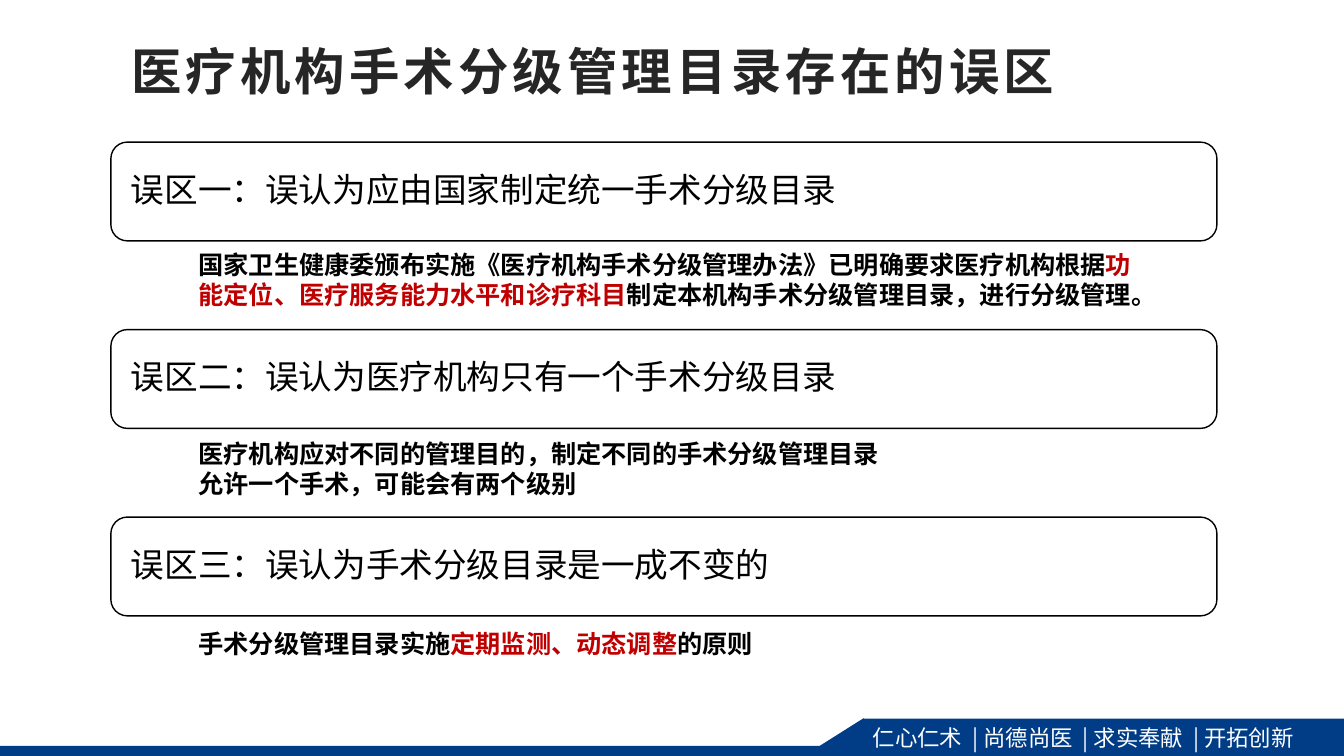
from pptx import Presentation
from pptx.dml.color import RGBColor
from pptx.enum.shapes import MSO_SHAPE
from pptx.enum.text import MSO_ANCHOR, MSO_AUTO_SIZE, PP_ALIGN
from pptx.oxml.ns import qn
from pptx.util import Inches, Pt
from lxml import etree

RECT = MSO_SHAPE.RECTANGLE
ROUND = MSO_SHAPE.ROUNDED_RECTANGLE
WEDGE = MSO_SHAPE.RIGHT_TRIANGLE
MIDDLE, TOP = MSO_ANCHOR.MIDDLE, MSO_ANCHOR.TOP
LATIN, ASIAN = "Arial", "Noto Sans CJK JP"
BLACK, WHITE, RED, NAVY, DARK = "000000", "FFFFFF", "C00000", "003D86", "262626"

TITLE = "医疗机构手术分级管理目录存在的误区"
MOTTO = "仁心仁术  | 尚德尚医  | 求实奉献  | 开拓创新"
# Each myth: heading, then paragraphs made of (text, colour) runs
MYTHS = [
    ("误区一：误认为应由国家制定统一手术分级目录", [[
        ("国家卫生健康委颁布实施《医疗机构手术分级管理办法》已明确要求医疗机构根据", BLACK),
        ("功能定位、医疗服务能力水平和诊疗科目", RED),
        ("制定本机构手术分级管理目录，进行分级管理。", BLACK)]]),
    ("误区二：误认为医疗机构只有一个手术分级目录", [
        [("医疗机构应对不同的管理目的，制定不同的手术分级管理目录", BLACK)],
        [("允许一个手术，可能会有两个级别", BLACK)]]),
    ("误区三：误认为手术分级目录是一成不变的", [[
        ("手术分级管理目录实施", BLACK),
        ("定期监测、动态调整", RED),
        ("的原则", BLACK)]]),
]
BAR_TOP, BAR_STEP = 1.41, 1.86
NOTE_TOP, NOTE_STEP = 2.42, 1.88

deck = Presentation()
deck.slide_width, deck.slide_height = Inches(13.33), Inches(7.5)
slide = deck.slides.add_slide(deck.slide_layouts[5])


def rgb(code):
    return RGBColor.from_string(code)


def write(shape, paras, size, font=LATIN, bold=False, anchor=MIDDLE,
          inset=0.1, line=None, track=None):
    """Fill a shape with paragraphs of (text, colour) runs."""
    frame = shape.text_frame
    frame.word_wrap = True
    frame.auto_size = MSO_AUTO_SIZE.NONE
    frame.vertical_anchor = anchor
    frame.margin_left = frame.margin_right = Inches(inset)
    frame.margin_top = frame.margin_bottom = Inches(0.05)
    for i, runs in enumerate(paras):
        para = frame.add_paragraph() if i else frame.paragraphs[0]
        para.alignment = PP_ALIGN.LEFT
        if line:
            para.line_spacing = line
        for text, color in runs:
            run = para.add_run()
            run.text = text
            run.font.size, run.font.bold = Pt(size), bold
            run.font.color.rgb = rgb(color)
            run.font.name = font
            props = run.font._element
            etree.SubElement(props, qn("a:ea"), typeface=ASIAN)
            if track:
                props.set("spc", str(track * 100))


def block(kind, box, fill, edge=None):
    shape = slide.shapes.add_shape(kind, *map(Inches, box))
    shape.shadow.inherit = False
    shape.fill.solid()
    shape.fill.fore_color.rgb = rgb(fill)
    if edge:
        shape.line.color.rgb = rgb(edge)
        shape.line.width = Pt(1)
    else:
        shape.line.fill.background()
    return shape


block(RECT, (0, 7.4, 10.04, 0.1), NAVY)
block(WEDGE, (8.1, 7.02, 0.36, 0.57), NAVY).rotation = 270
footer = block(RECT, (8.56, 7.13, 4.78, 0.37), NAVY)
write(footer, [[(MOTTO, WHITE)]], 16, font=ASIAN)

title = slide.shapes.title
title.left, title.top, title.width, title.height = map(
    Inches, (1.2, 0.31, 9.95, 0.77))
write(title, [[(TITLE, DARK)]], 36, bold=True, track=3)

for i, (head, note) in enumerate(MYTHS):
    bar = block(ROUND, (1.1, BAR_TOP + i * BAR_STEP, 10.97, 0.98), WHITE, BLACK)
    write(bar, [[(head, BLACK)]], 24, inset=0.15, line=0.9)
    box = slide.shapes.add_textbox(
        *map(Inches, (1.87, NOTE_TOP + i * NOTE_STEP, 9.54, 0.71)))
    write(box, note, 18, bold=True, anchor=TOP)

deck.save("out.pptx")
